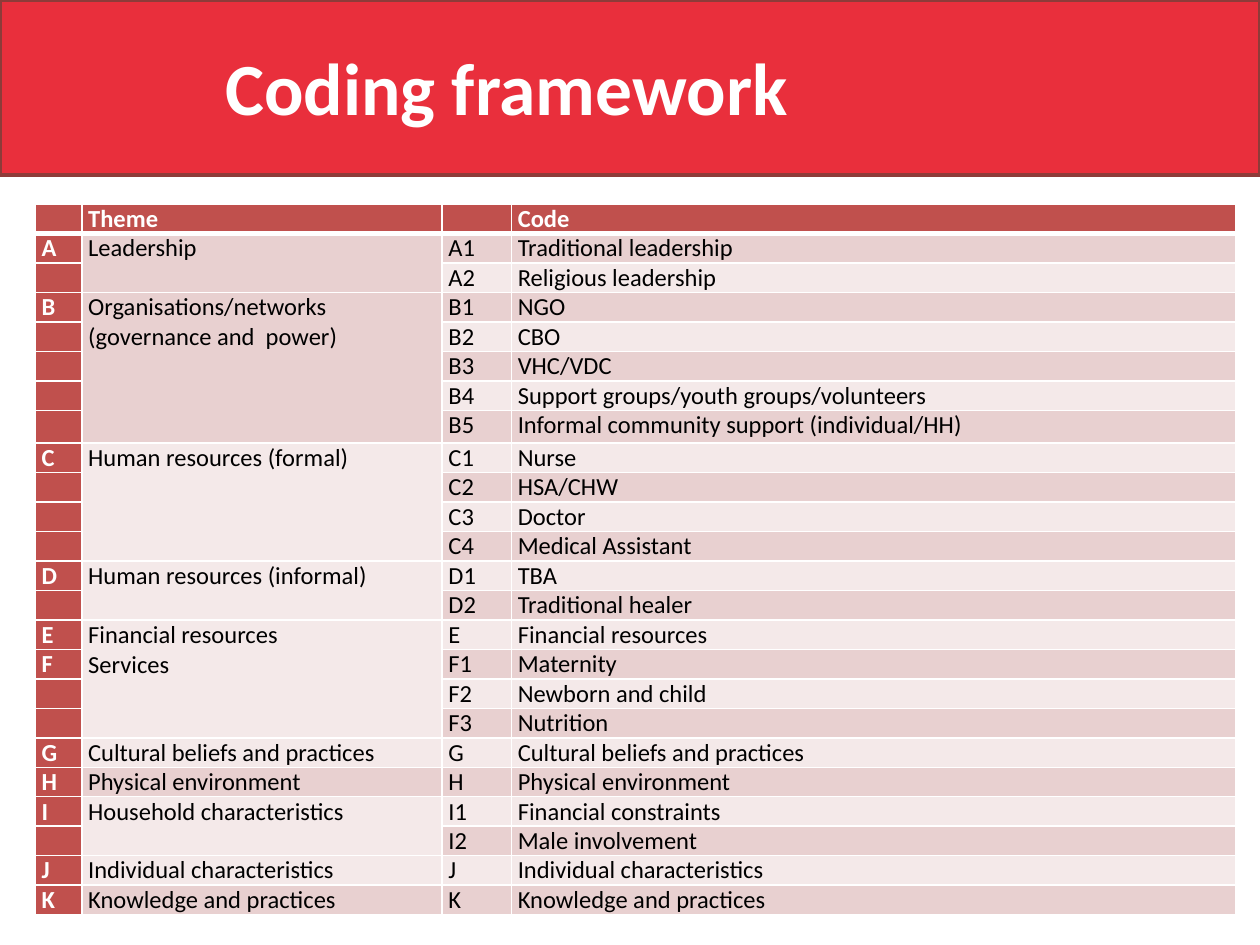
from dataclasses import dataclass

from lxml import etree
from pptx import Presentation
from pptx import util as u
from pptx.dml.color import RGBColor
from pptx.enum import shapes, text
from pptx.oxml.ns import qn


@dataclass(frozen=True)
class Theme:
    """Colours, font and type sizes of the slide."""
    banner: str = "E92F3C"
    banner_edge: str = "8E3B39"
    accent: str = "C0504D"
    bands: tuple = ("F4E9E9", "E8D0D0")
    light: str = "FFFFFF"
    dark: str = "000000"
    font: str = "Calibri"
    title_size: int = 42
    table_size: int = 14


THEME = Theme()
HEADINGS = ("", "Theme", "", "Code")
COLUMN_WIDTHS = (0.37, 2.86, 0.55, 5.75)
ROW_HEIGHT = 0.23
TALL_ROWS = {7: 0.26}
FRAMEWORK = [
    ("Leadership", [("A1", "Traditional leadership"), ("A2", "Religious leadership")]),
    ("Organisations/networks (governance and  power)", [
        ("B1", "NGO"),
        ("B2", "CBO"),
        ("B3", "VHC/VDC"),
        ("B4", "Support groups/youth groups/volunteers"),
        ("B5", "Informal community support (individual/HH)"),
    ]),
    ("Human resources (formal)", [
        ("C1", "Nurse"), ("C2", "HSA/CHW"), ("C3", "Doctor"), ("C4", "Medical Assistant"),
    ]),
    ("Human resources (informal)", [("D1", "TBA"), ("D2", "Traditional healer")]),
    ("Financial resources\nServices", [
        ("E", "Financial resources"),
        ("F1", "Maternity"),
        ("F2", "Newborn and child"),
        ("F3", "Nutrition"),
    ]),
    ("Cultural beliefs and practices", [("G", "Cultural beliefs and practices")]),
    ("Physical environment", [("H", "Physical environment")]),
    ("Household characteristics", [("I1", "Financial constraints"), ("I2", "Male involvement")]),
    ("Individual characteristics", [("J", "Individual characteristics")]),
    ("Knowledge and practices", [("K", "Knowledge and practices")]),
]


def write(frame, wording, *, size, color, bold=False, align=text.PP_ALIGN.LEFT):
    """Put formatted wording in a text frame, one paragraph a line."""
    frame.word_wrap = True
    frame.text = wording
    for paragraph in frame.paragraphs:
        paragraph.alignment = align
        for run in paragraph.runs:
            run.font.name = THEME.font
            run.font.size = u.Pt(size)
            run.font.bold = bold
            run.font.color.rgb = RGBColor.from_string(color)
        if not paragraph.runs:
            end = etree.SubElement(paragraph._p, qn("a:endParaRPr"))
            end.set("sz", str(size * 100))


def add_borders(cell, **widths):
    """Draw light cell borders, with widths in points keyed by side."""
    properties = cell._tc.get_or_add_tcPr()
    for side in "LRTB":
        line = etree.SubElement(properties, qn(f"a:ln{side}"), w=str(u.Pt(widths.get(side, 1))))
        fill = etree.SubElement(line, qn("a:solidFill"))
        etree.SubElement(fill, qn("a:srgbClr"), val=THEME.light)


def style_cell(cell, wording, fill, *, heading=False, **border_widths):
    """Set the wording, margins, borders and fill of a table cell."""
    cell.margin_left = cell.margin_right = u.Inches(0.05)
    cell.margin_top = cell.margin_bottom = 0
    write(cell.text_frame, wording, size=THEME.table_size, bold=heading,
          color=THEME.light if heading else THEME.dark)
    add_borders(cell, **border_widths)
    cell.fill.solid()
    cell.fill.fore_color.rgb = RGBColor.from_string(fill)


def add_banner(slide, left, top, width, height):
    """Place the banner and the slide title within the given box."""
    banner = slide.shapes.add_shape(shapes.MSO_SHAPE.RECTANGLE, left, top, width, height)
    banner.shadow.inherit = False
    banner.fill.solid()
    banner.fill.fore_color.rgb = RGBColor.from_string(THEME.banner)
    banner.line.color.rgb = RGBColor.from_string(THEME.banner_edge)
    banner.line.width = u.Pt(2)
    title = slide.shapes.add_textbox(left + u.Inches(0.28), top + u.Inches(0.06),
                                     u.Inches(7.48), u.Inches(1.25))
    title.text_frame.vertical_anchor = text.MSO_ANCHOR.MIDDLE
    write(title.text_frame, "Coding framework", size=THEME.title_size,
          color=THEME.light, bold=True, align=text.PP_ALIGN.CENTER)


def add_framework(slide, left, top, width, height):
    """Place the table of themes and their codes in the given box."""
    row_count = 1 + sum(len(codes) for _, codes in FRAMEWORK)
    table = slide.shapes.add_table(row_count, len(HEADINGS), left, top, width, height).table
    table.horz_banding = False
    for column, column_width in zip(table.columns, COLUMN_WIDTHS):
        column.width = u.Inches(column_width)
    for index, row in enumerate(table.rows):
        row.height = u.Inches(TALL_ROWS.get(index, ROW_HEIGHT))
    for column, heading in enumerate(HEADINGS):
        style_cell(table.cell(0, column), heading, THEME.accent, heading=True, B=3)

    first = 1
    for theme, codes in FRAMEWORK:
        for row, (code, label) in enumerate(codes, first):
            letter = code[0] if code in (code[0], code[0] + "1") else ""
            band = THEME.bands[row % 2]
            top_width = 3 if row == 1 else 1
            style_cell(table.cell(row, 0), letter, THEME.accent, heading=True, T=top_width)
            style_cell(table.cell(row, 1), theme if row == first else "",
                       THEME.bands[first % 2], T=top_width)
            style_cell(table.cell(row, 2), code, band, T=top_width)
            style_cell(table.cell(row, 3), label, band, T=top_width)
        last = first + len(codes) - 1
        if last > first:
            table.cell(first, 1).merge(table.cell(last, 1))
        first = last + 1


def main():
    """Build the coding framework slide."""
    deck = Presentation()
    deck.slide_width, deck.slide_height = u.Inches(10), u.Inches(7.5)
    slide = deck.slides.add_slide(deck.slide_layouts[6])
    add_banner(slide, 0, 0, deck.slide_width, u.Inches(1.39))
    add_framework(slide, u.Inches(0.28), u.Inches(1.62), u.Inches(9.53), u.Inches(5.67))
    deck.save("out.pptx")


if __name__ == "__main__":
    main()
